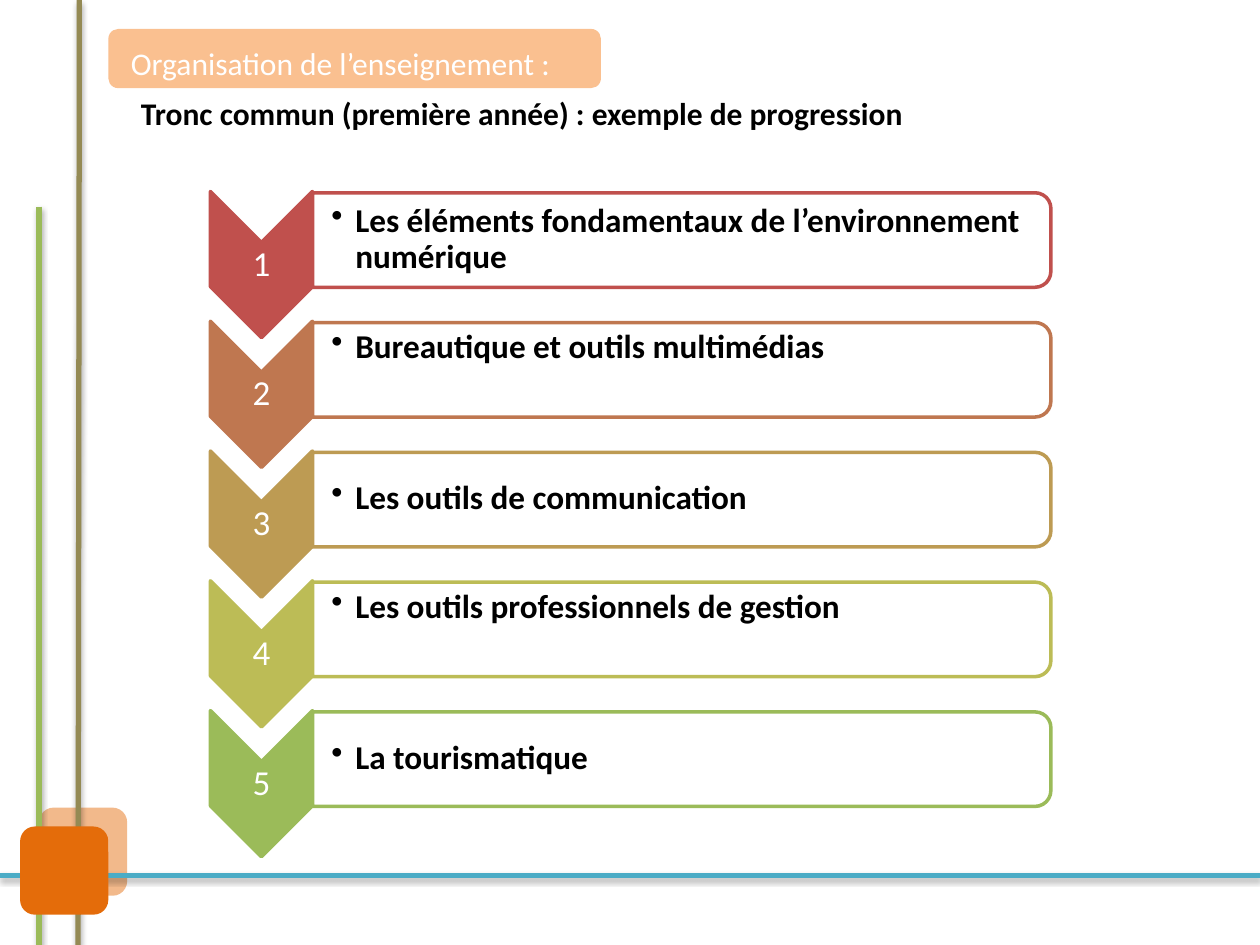
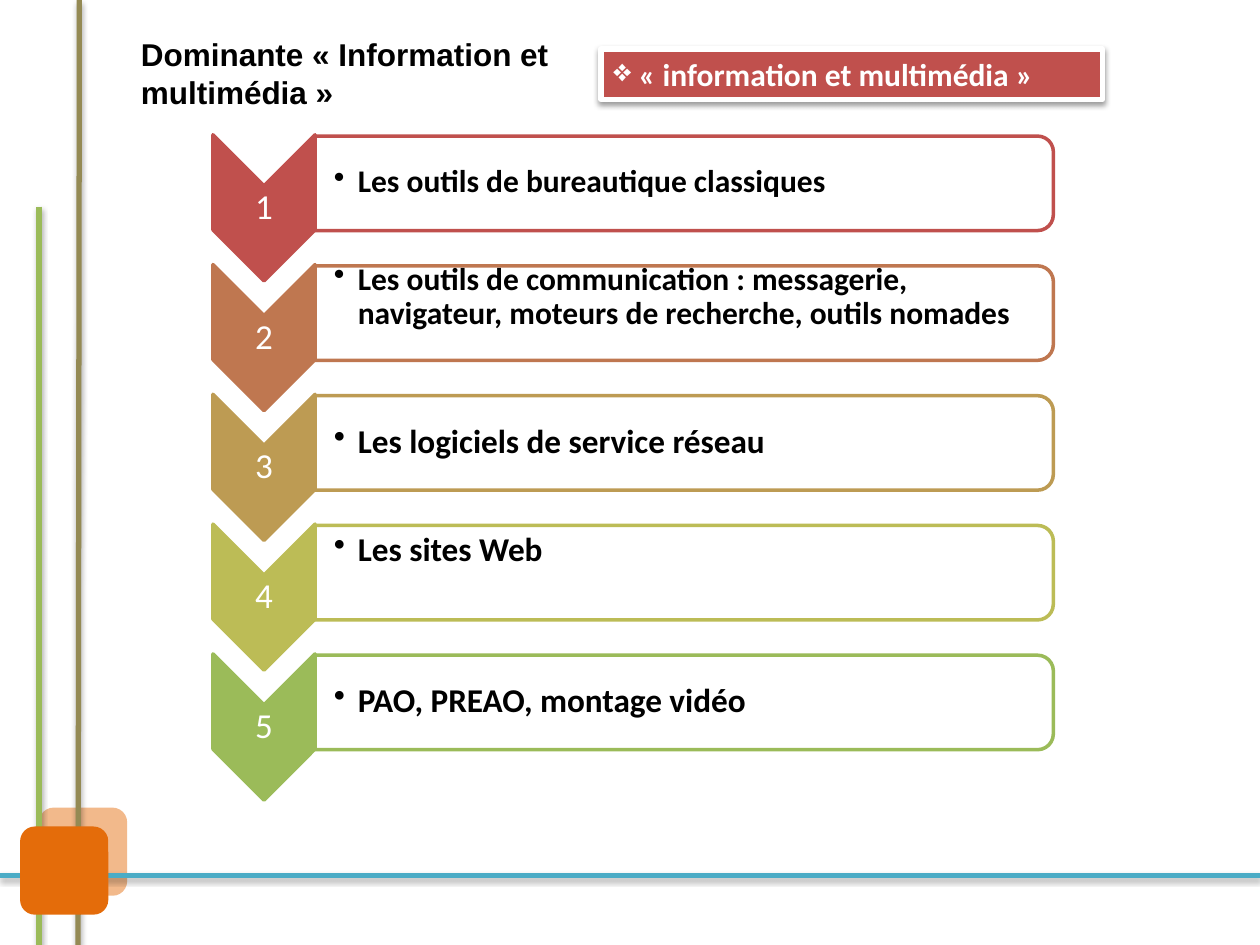
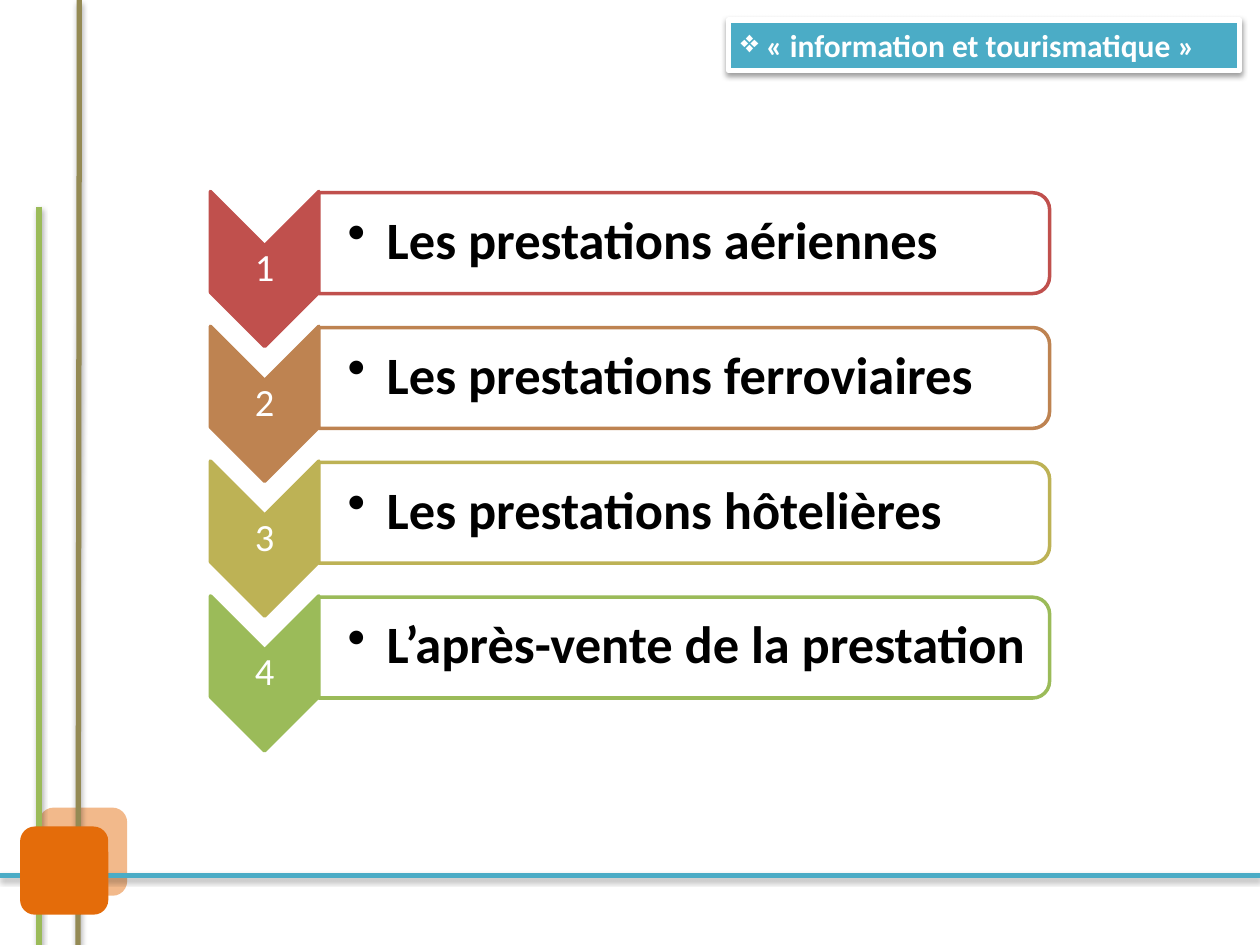
from lxml import etree
from pptx import Presentation
from pptx.dml import color
from pptx.enum import shapes, text
from pptx.oxml import ns
from pptx.util import Inches, Pt

COLORS = {
    "orange": "E46C0A", "peach": "FAC090", "green": "9BBB59", "olive": "948A54",
    "blue": "4BACC6", "red": "C0504D", "copper": "BF7750", "ochre": "BD9B53",
    "lime": "BCBC56", "bronze": "BE8351", "khaki": "BDB255",
    "white": "FFFFFF", "black": "000000",
}
FIVE_STEPS = ("red", "copper", "ochre", "lime", "green")
FOUR_STEPS = ("red", "bronze", "khaki", "green")
SHAPE = shapes.MSO_SHAPE
SINGLE_LIFT = 0.17
NORMAL = {"chevron": (0.81, 1.16), "panel": (5.86, 0.75), "pitch": 1.03,
          "number_size": 20, "padding": 0.15, "hanging": 0.19, "inset": 0.01}
LARGE = {"chevron": (0.86, 1.23), "panel": (5.8, 0.8), "pitch": 1.07,
         "number_size": 22, "padding": 0.23, "hanging": 0.31, "inset": 0.02}


def rgb(name):
    return color.RGBColor.from_string(COLORS[name])


def set_values(target, values):
    for name, value in values.items():
        setattr(target, name, value)


def add_xml(parent, tag, **attributes):
    return etree.SubElement(parent, ns.qn(tag), attributes)


def add_shadow(shape, opacity, distance):
    """Give the shape a soft shadow that falls straight down."""
    properties = shape.element.spPr
    effects = properties.find(ns.qn("a:effectLst"))
    if effects is None:
        effects = add_xml(properties, "a:effectLst")
    shadow = add_xml(effects, "a:outerShdw", blurRad=str(Pt(3.1)),
                     dist=str(Pt(distance)), dir="5400000", rotWithShape="0")
    shade = add_xml(shadow, "a:srgbClr", val=COLORS["black"])
    add_xml(shade, "a:alpha", val=str(opacity * 1000))


def add_block(slide, kind, box, fill, line=None, width=2, opacity=None):
    shape = slide.shapes.add_shape(kind, *map(Inches, box))
    shape.shadow.inherit = False
    shape.fill.solid()
    shape.fill.fore_color.rgb = rgb(fill)
    if opacity:
        shade = shape.element.spPr.find(".//" + ns.qn("a:srgbClr"))
        add_xml(shade, "a:alpha", val=str(opacity * 1000))
    if line:
        shape.line.color.rgb = rgb(line)
        shape.line.width = Pt(width)
    else:
        shape.line.fill.background()
    return shape


def add_turned(slide, kind, box, fill, line):
    """Add a shape turned a quarter clockwise that covers the given box."""
    left, top, width, height = box
    shift = (width - height) / 2
    shape = add_block(slide, kind, (left + shift, top - shift, height, width), fill, line)
    shape.rotation = 90


def write(shape, words, ink="black", size=18, bold=False, font="Calibri",
          frame=None, layout=None, bullet=None, hanging=0):
    text_frame = shape.text_frame
    set_values(text_frame, {"word_wrap": True, **(frame or {})})
    paragraph = text_frame.paragraphs[0]
    set_values(paragraph, {"alignment": text.PP_ALIGN.LEFT, **(layout or {})})
    run = paragraph.add_run()
    run.text = words
    set_values(run.font, {"name": font, "size": Pt(size), "bold": bold})
    run.font.color.rgb = rgb(ink)
    if bullet:
        properties = paragraph.element.get_or_add_pPr() if hasattr(
            paragraph, "element") else paragraph._p.get_or_add_pPr()
        properties.set("marL", str(Inches(hanging)))
        properties.set("indent", str(-Inches(hanging)))
        add_xml(properties, "a:buChar", char=bullet)


def add_text(slide, box, words, **style):
    write(slide.shapes.add_textbox(*map(Inches, box)), words, **style)


def add_frame(slide):
    """Draw the crossing lines and the two orange squares of every slide."""
    side = 0.7
    add_block(slide, SHAPE.ROUNDED_RECTANGLE, (0.31, 6.41, side, side), "orange", opacity=47)
    for name, ends in (("green", (0.31, 1.64, 0.31, 7.5)),
                       ("olive", (0.63, 0, 0.62, 7.5)),
                       ("blue", (0, 6.95, 10, 6.95))):
        line = slide.shapes.add_connector(shapes.MSO_CONNECTOR.STRAIGHT, *map(Inches, ends))
        line.line.color.rgb = rgb(name)
        line.line.width = Pt(3)
        add_shadow(line, 35, 1.8)
    add_block(slide, SHAPE.ROUNDED_RECTANGLE, (0.16, 6.56, side, side), "orange")


def add_tag(slide, box, words, fill):
    tag = add_block(slide, SHAPE.RECTANGLE, box, fill, "white", 3)
    add_shadow(tag, 38, 1.6)
    write(tag, words, ink="white", bold=True, bullet="❖",
          frame={"vertical_anchor": text.MSO_ANCHOR.TOP})


def add_step(slide, left, top, number, step, fill, style):
    """Draw a numbered chevron and, at its right, the panel with its topic."""
    words, size, lift = step
    chevron_width, chevron_height = style["chevron"]
    panel_width, panel_height = style["panel"]
    panel_left = left + chevron_width
    inset = Inches(style["inset"])
    frame = {"vertical_anchor": text.MSO_ANCHOR.MIDDLE, "margin_left": inset,
             "margin_right": inset, "margin_top": inset, "margin_bottom": inset}

    add_turned(slide, SHAPE.CHEVRON, (left, top, chevron_width, chevron_height), fill, fill)
    add_text(slide, (left, top + chevron_width / 2, chevron_width,
                     chevron_height - chevron_width), str(number),
             ink="white", size=style["number_size"], frame=frame,
             layout={"alignment": text.PP_ALIGN.CENTER, "line_spacing": 0.9})
    add_turned(slide, SHAPE.ROUND_2_SAME_RECTANGLE,
               (panel_left, top + 0.01, panel_width, panel_height), "white", fill)
    add_text(slide, (panel_left, top + 0.04 - lift, panel_width - 0.04, panel_height - 0.07),
             words, size=size, bold=True, bullet="•", hanging=style["hanging"],
             frame={**frame, "margin_left": Inches(style["padding"])},
             layout={"line_spacing": 0.9})


def add_steps(slide, left, top, steps, fills, style):
    for index, (step, fill) in enumerate(zip(steps, fills)):
        add_step(slide, left, top + index * style["pitch"], index + 1, step, fill, style)


def build_common_core(slide):
    add_text(slide, (1.02, 0.7, 7.81, 0.4),
             "Tronc commun (première année) : exemple de progression", bold=True)
    add_steps(slide, 1.67, 1.52, (
        ("Les éléments fondamentaux de l’environnement numérique", 19, 0),
        ("Bureautique et outils multimédias", 19, SINGLE_LIFT),
        ("Les outils de communication", 19, 0),
        ("Les outils professionnels de gestion", 19, SINGLE_LIFT),
        ("La tourismatique", 19, 0),
    ), FIVE_STEPS, NORMAL)
    add_block(slide, SHAPE.ROUNDED_RECTANGLE, (0.86, 0.23, 3.91, 0.47), "peach")
    add_text(slide, (0.94, 0.3, 5.62, 0.4), "Organisation de l’enseignement :", ink="white")


def build_multimedia(slide):
    add_text(slide, (1.02, 0.23, 4.53, 0.7), "Dominante « Information et multimédia »",
             bold=True, font="Arial")
    add_tag(slide, (4.77, 0.39, 3.98, 0.4), " « information et multimédia »", "red")
    add_steps(slide, 1.69, 1.07, (
        ("Les outils de bureautique classiques", 18, 0),
        ("Les outils de communication : messagerie, navigateur, "
         "moteurs de recherche, outils nomades", 18, 0.12),
        ("Les logiciels de service réseau", 19, 0),
        ("Les sites Web", 19, SINGLE_LIFT),
        ("PAO, PREAO, montage vidéo", 19, 0),
    ), FIVE_STEPS, NORMAL)


def build_tourism(slide):
    add_tag(slide, (5.78, 0.16, 4.06, 0.4), " « information et tourismatique »", "blue")
    add_steps(slide, 1.67, 1.52, (
        ("Les prestations aériennes", 30, 0),
        ("Les prestations ferroviaires", 30, 0),
        ("Les prestations hôtelières", 30, 0),
        ("L’après-vente de la prestation", 30, 0),
    ), FOUR_STEPS, LARGE)


def main():
    presentation = Presentation()
    set_values(presentation, {"slide_width": Inches(10), "slide_height": Inches(7.5)})
    for build in (build_common_core, build_multimedia, build_tourism):
        slide = presentation.slides.add_slide(presentation.slide_layouts[6])
        add_frame(slide)
        build(slide)
    presentation.save("out.pptx")


if __name__ == "__main__":
    main()
